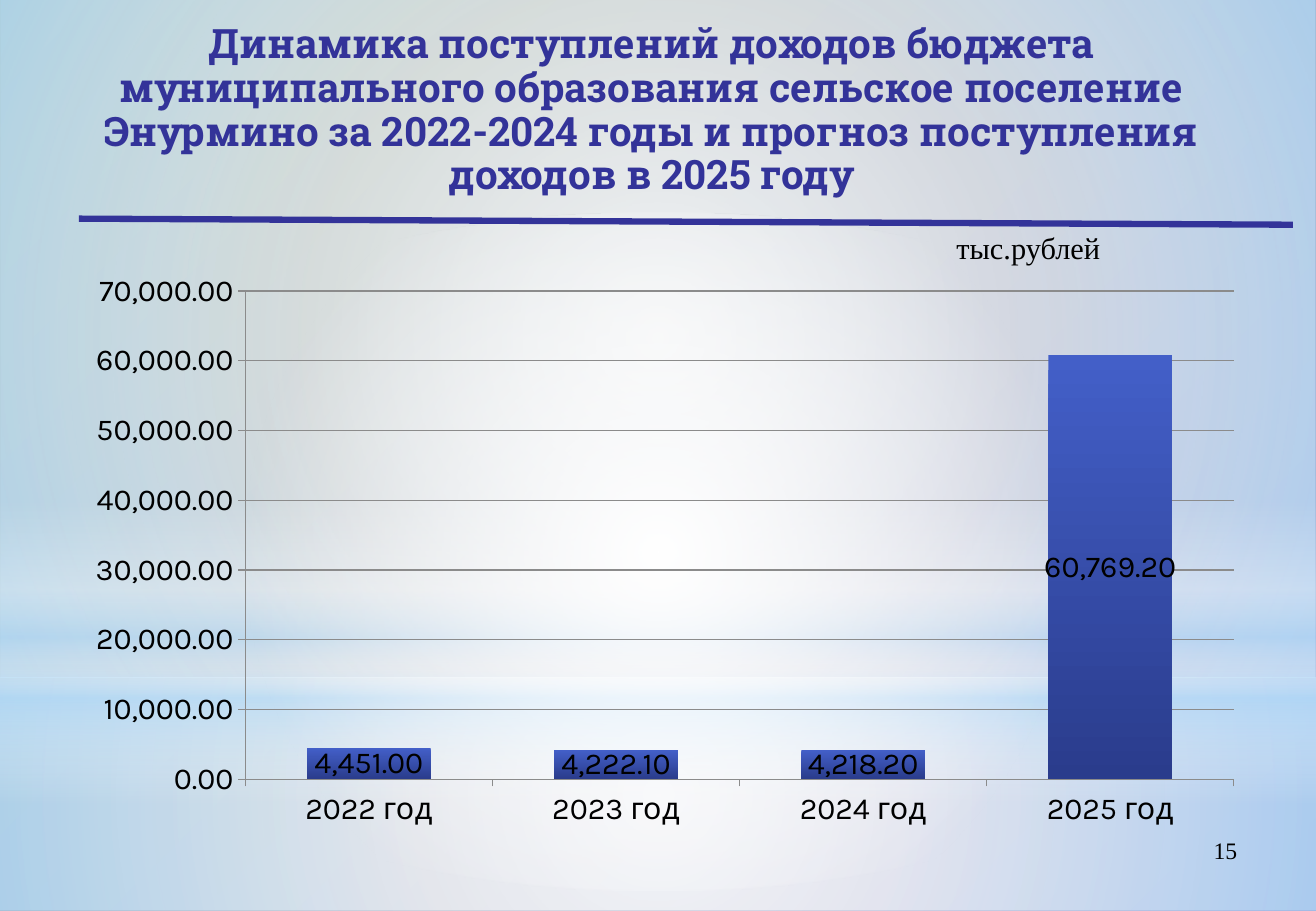
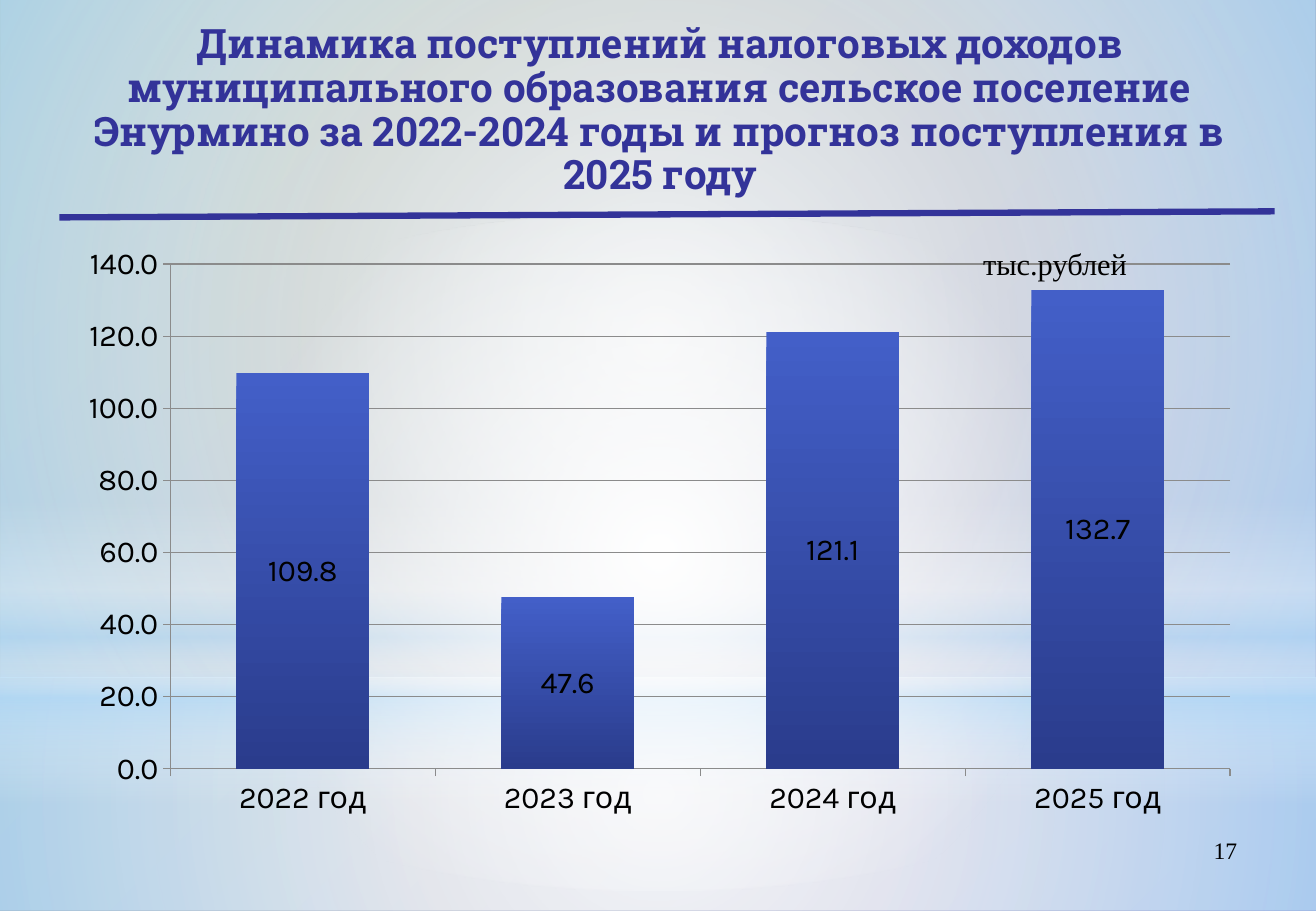
from lxml import etree
from pptx import Presentation
from pptx.chart.data import CategoryChartData
from pptx.dml.color import RGBColor
from pptx.enum.chart import XL_CHART_TYPE, XL_LABEL_POSITION, XL_TICK_MARK
from pptx.enum.shapes import MSO_CONNECTOR, MSO_SHAPE
from pptx.enum.text import MSO_ANCHOR, MSO_AUTO_SIZE, PP_ALIGN
from pptx.oxml.ns import qn
from pptx.util import Pt

PX = 9144
WIDTH, HEIGHT = 1084, 750
TITLE_ONLY = 5
RECT, OVAL = MSO_SHAPE.RECTANGLE, MSO_SHAPE.OVAL
STRAIGHT = MSO_CONNECTOR.STRAIGHT
STACKED = XL_CHART_TYPE.COLUMN_STACKED
LABEL_CENTER = XL_LABEL_POSITION.CENTER
TICK_OUT, TICK_NONE = XL_TICK_MARK.OUTSIDE, XL_TICK_MARK.NONE
MIDDLE, TOP = MSO_ANCHOR.MIDDLE, MSO_ANCHOR.TOP
NO_FIT = MSO_AUTO_SIZE.NONE
LEFT, CENTER, RIGHT = PP_ALIGN.LEFT, PP_ALIGN.CENTER, PP_ALIGN.RIGHT

TITLE_FONT, CHART_FONT, BODY_FONT = "Roboto Slab", "Karla", "Times New Roman"
NAVY, BLACK, GREY, WHITE, SKY = "333399", "000000", "8B8B8B", "FFFFFF", "B4DCFA"

BACKGROUND = [(0, "96AB94", 100), (100, "8488C4", 100)]
COLUMN_FILL = [(0, "435FC8", 100), (100, "2A3C8C", 100)]
BANDS = [
    (RECT, (0, 558, WIDTH, 192), [(0, WHITE, 91), (37, WHITE, 76), (100, SKY, 79)], None),
    (RECT, (0, 0, WIDTH, 558), [(0, WHITE, 89), (48, WHITE, 62), (100, SKY, 79)], None),
    (RECT, (0, 412, WIDTH, 250),
     [(0, WHITE, 0), (29, WHITE, 30), (45, SKY, 40), (55, WHITE, 26), (65, SKY, 60), (100, WHITE, 0)], 90),
    (OVAL, (0, 175, WIDTH, 558), [(0, WHITE, 100), (56, WHITE, 0)], None),
]

NUMBER_BOX = (776, 683, 253, 52)
UNIT = "тыс.рублей"
YEARS = ["2022 год", "2023 год", "2024 год", "2025 год"]
SLIDES = [
    {
        "title": "Динамика поступлений доходов бюджета муниципального образования сельское поселение "
                 "Энурмино за 2022-2024 годы и прогноз поступления доходов в 2025 году",
        "title_box": (49, 23, 975, 137),
        "rule": (65, 180, 1065, 185),
        "unit_box": (778, 184, 140, 40),
        "chart_box": (55, 216, 981, 473),
        "plot": (0.15, 0.05, 0.83, 0.85),
        "values": [4451, 4222.1, 4218.2, 60769.2],
        "format": "#,##0.00",
        "top": 70000,
        "step": 10000,
        "number": "15",
    },
    {
        "title": "Динамика поступлений налоговых доходов муниципального образования сельское поселение "
                 "Энурмино за 2022-2024 годы и прогноз поступления в 2025 году",
        "title_box": (56, 23, 975, 137),
        "rule": (49, 179, 1050, 174),
        "unit_box": (800, 197, 140, 40),
        "chart_box": (52, 193, 981, 489),
        "plot": (0.09, 0.05, 0.89, 0.85),
        "values": [109.8, 47.6, 121.1, 132.7],
        "format": "#,##0.0",
        "top": 140,
        "step": 20,
        "number": "17",
    },
]


def color(hex_code):
    return RGBColor.from_string(hex_code)


def emu(lengths):
    return [length * PX for length in lengths]


def paint_gradient(fill, owner, stops, angle):
    fill.gradient()
    gradient = next(owner.iter(qn("a:gradFill")))
    for child in list(gradient):
        gradient.remove(child)
    stop_list = etree.SubElement(gradient, qn("a:gsLst"))
    for position, hex_code, opacity in stops:
        stop = etree.SubElement(stop_list, qn("a:gs"), pos=str(position * 1000))
        shade = etree.SubElement(stop, qn("a:srgbClr"), val=hex_code)
        if opacity < 100:
            etree.SubElement(shade, qn("a:alpha"), val=str(opacity * 1000))
    if angle is None:
        route = etree.SubElement(gradient, qn("a:path"), path="circle")
        etree.SubElement(route, qn("a:fillToRect"), l="50000", t="50000", r="50000", b="50000")
    else:
        etree.SubElement(gradient, qn("a:lin"), ang=str(angle * 60000), scaled="0")


def add_backdrop(deck, layout, page):
    master = deck.slide_master
    paint_gradient(master.background.fill, master.element, BACKGROUND, 45)
    for index, (kind, place, stops, angle) in enumerate(BANDS):
        band = page.shapes.add_shape(kind, *emu(place))
        band.shadow.inherit = False
        band.line.fill.background()
        paint_gradient(band.fill, band.element, stops, angle)
        band.element.nvSpPr.cNvPr.set("id", str(20 + index))
        layout.shapes.element.insert(2 + index, band.element)


def style_font(font, name, size, hex_code, bold=False):
    font.name, font.size, font.bold = name, Pt(size), bold
    font.color.rgb = color(hex_code)


def write(box, text, font_name, size, hex_code, align, anchor=TOP, bold=False, wrap=True):
    frame = box.text_frame
    frame.text = text
    frame.word_wrap = wrap
    frame.auto_size = NO_FIT
    frame.vertical_anchor = anchor
    para = frame.paragraphs[0]
    para.alignment = align
    style_font(para.runs[0].font, font_name, size, hex_code, bold)
    return para


def add_title(page, text, place):
    title = page.shapes.title
    title.left, title.top, title.width, title.height = emu(place)
    para = write(title, text, TITLE_FONT, 24, NAVY, CENTER, MIDDLE, bold=True)
    para.line_spacing = 0.9


def add_rule(page, ends):
    rule = page.shapes.add_connector(STRAIGHT, *emu(ends))
    rule.line.color.rgb = color(NAVY)
    rule.line.width = Pt(3.75)
    etree.SubElement(rule.element.spPr, qn("a:effectLst"))


def place_plot(chart, fractions):
    area = chart.element.chart.plotArea
    for old in area.findall(qn("c:layout")):
        area.remove(old)
    layout = etree.Element(qn("c:layout"))
    area.insert(0, layout)
    manual = etree.SubElement(layout, qn("c:manualLayout"))
    settings = [("layoutTarget", "inner"), ("xMode", "edge"), ("yMode", "edge")]
    settings += zip("xywh", fractions)
    for tag, value in settings:
        etree.SubElement(manual, qn("c:" + tag), val=str(value))


def add_income_chart(page, content):
    data = CategoryChartData()
    data.categories = YEARS
    data.add_series("Series 1", content["values"])
    chart = page.shapes.add_chart(STACKED, *emu(content["chart_box"]), data).chart
    chart.has_title = chart.has_legend = False
    style_font(chart.font, CHART_FONT, 18, BLACK)
    place_plot(chart, content["plot"])

    plot = chart.plots[0]
    plot.vary_by_categories = False
    plot.gap_width = plot.overlap = 100
    paint_gradient(plot.series[0].format.fill, chart.element, COLUMN_FILL, 90)
    plot.has_data_labels = True
    labels = plot.data_labels
    labels.show_value = True
    labels.position = LABEL_CENTER
    style_font(labels.font, CHART_FONT, 18, BLACK)

    scale = chart.value_axis
    scale.minimum_scale, scale.maximum_scale = 0, content["top"]
    scale.major_unit = content["step"]
    for numbers in (labels, scale.tick_labels):
        numbers.number_format = content["format"]
        numbers.number_format_is_linked = False
    scale.has_major_gridlines = True
    for axis in (scale, chart.category_axis):
        axis.major_tick_mark, axis.minor_tick_mark = TICK_OUT, TICK_NONE
    for part in (scale, scale.major_gridlines, chart.category_axis):
        part.format.line.color.rgb = color(GREY)
        part.format.line.width = Pt(0.75)


def fill_page(page, content):
    number = page.shapes.add_textbox(*emu(NUMBER_BOX))
    write(number, content["number"], BODY_FONT, 14, BLACK, RIGHT)
    add_title(page, content["title"], content["title_box"])
    add_rule(page, content["rule"])
    add_income_chart(page, content)
    unit = page.shapes.add_textbox(*emu(content["unit_box"]))
    write(unit, UNIT, BODY_FONT, 18, BLACK, LEFT, wrap=False)


def main():
    deck = Presentation()
    deck.slide_width, deck.slide_height = emu((WIDTH, HEIGHT))
    layout = deck.slide_layouts[TITLE_ONLY]
    pages = [deck.slides.add_slide(layout) for _ in SLIDES]
    add_backdrop(deck, layout, pages[0])
    for page, content in zip(pages, SLIDES):
        fill_page(page, content)
    deck.save("out.pptx")


if __name__ == "__main__":
    main()
